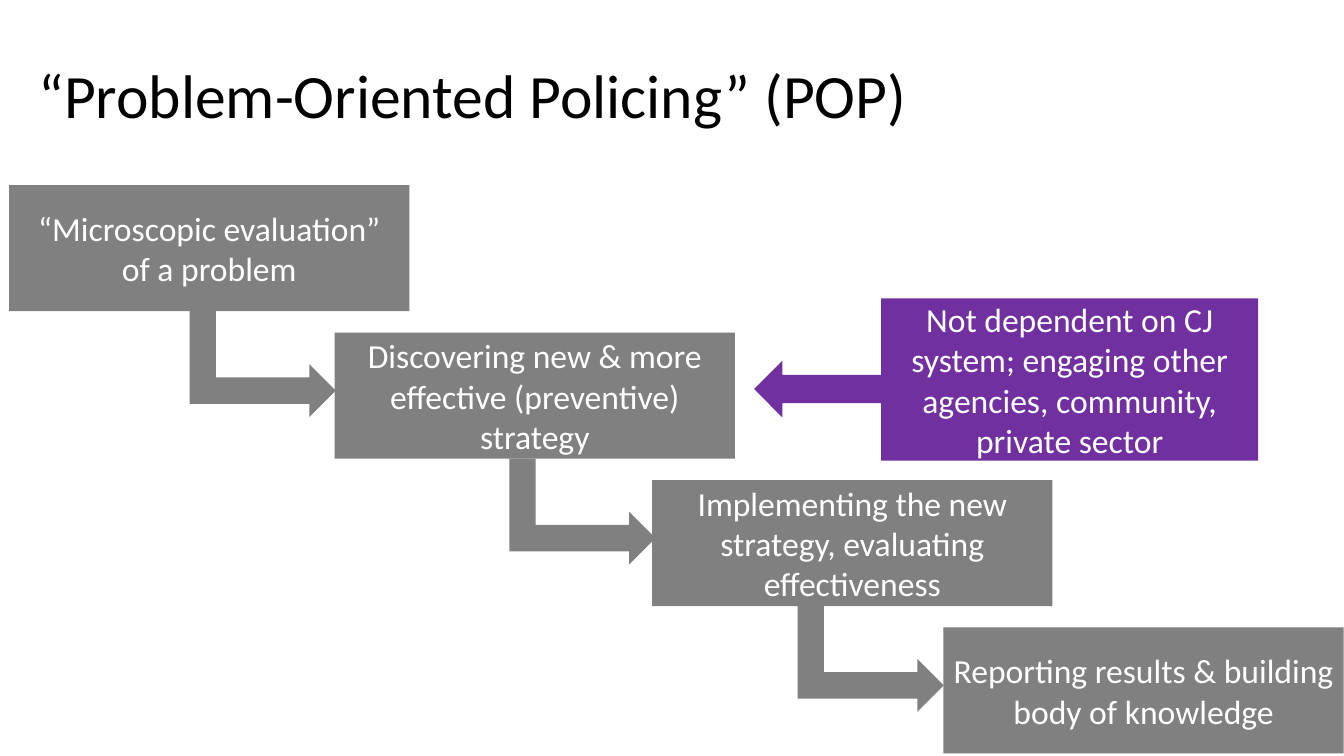
"""Build the problem-oriented policing slide: a staircase of steps with a side note."""
from dataclasses import dataclass

from pptx import Presentation
from pptx.dml.color import RGBColor
from pptx.enum.shapes import MSO_SHAPE as Shape
from pptx.enum.text import MSO_ANCHOR as Anchor, MSO_AUTO_SIZE as AutoSize, PP_ALIGN as Align
from pptx.util import Inches, Pt

COLORS = {"step": "808080", "note": "7030A0", "light": "FFFFFF", "title": "000000"}
FONT = "Calibri"
WIDTH, HEIGHT = Inches(13.33), Inches(7.5)
COL, ROW = WIDTH / 100, HEIGHT / 100
STEP_TOP, STEP_RISE = 24.5, 19.5
STEP_W, STEP_H = 29.78, 16.67
BEND_W, BEND_H = 10.88, 14


@dataclass
class Box:
    """A place on the slide in grid columns and rows."""
    col: float
    row: float
    cols: float
    rows: float

    def emu(self) -> tuple[int, int, int, int]:
        """Return left, top, width and height."""
        return (round(self.col * COL), round(self.row * ROW),
                round(self.cols * COL), round(self.rows * ROW))


@dataclass
class Step:
    """A stair with its left column and that of the arrow leaving it."""
    text: str
    col: float
    bend_col: float | None = None


STEPS = [
    Step("“Microscopic evaluation”\vof a problem", 0.68, 14.1),
    Step("Discovering new & more effective (preventive) strategy", 24.9, 37.89),
    Step("Implementing the new strategy, evaluating effectiveness", 48.53, 59.34),
    Step("Reporting results & building body of knowledge", 70.2),
]
NOTE = "Not dependent on CJ system; engaging other agencies, community, private sector"


def style(p, size: float, color: str, align: Align) -> None:
    """Set the font and alignment of a paragraph."""
    p.alignment = align
    p.font.name, p.font.size = FONT, Pt(size)
    p.font.color.rgb = RGBColor.from_string(COLORS[color])


def add_shape(s, kind: Shape, at: tuple[int, int, int, int], color: str, text: str = ""):
    """Add a flat filled shape, with text where given."""
    sp = s.shapes.add_shape(kind, *at)
    sp.shadow.inherit = False
    sp.fill.solid()
    sp.fill.fore_color.rgb = RGBColor.from_string(COLORS[color])
    sp.line.fill.background()
    if text:
        tf = sp.text_frame
        tf.word_wrap, tf.vertical_anchor = True, Anchor.MIDDLE
        tf.text = text
        style(tf.paragraphs[0], 24, "light", Align.CENTER)
    return sp


def add_bend(s, box: Box) -> None:
    """Add a down-then-right arrow that fills the box once turned."""
    left, top, w, h = box.emu()
    at = (left + (w - h) // 2, top + (h - w) // 2, h, w)
    add_shape(s, Shape.BENT_UP_ARROW, at, "step").rotation = 90


def add_title(s, text: str) -> None:
    """Place and format the title."""
    sp = s.shapes.title
    sp.left, sp.top, sp.width, sp.height = Box(2.1, 3.33, 86.27, 19.33).emu()
    tf = sp.text_frame
    tf.text = text
    tf.word_wrap, tf.auto_size, tf.vertical_anchor = True, AutoSize.NONE, Anchor.MIDDLE
    p = tf.paragraphs[0]
    p.line_spacing = 0.9
    style(p, 44, "title", Align.LEFT)


def main() -> None:
    """Draw the slide and save it."""
    prs = Presentation()
    prs.slide_width, prs.slide_height = WIDTH, HEIGHT
    s = prs.slides.add_slide(prs.slide_layouts[5])
    add_title(s, "“Problem-Oriented Policing” (POP)")
    for i, step in enumerate(STEPS):
        row = STEP_TOP + i * STEP_RISE
        add_shape(s, Shape.RECTANGLE, Box(step.col, row, STEP_W, STEP_H).emu(), "step", step.text)
        if step.bend_col is not None:
            add_bend(s, Box(step.bend_col, row + STEP_H, BEND_W, BEND_H))
    add_shape(s, Shape.LEFT_ARROW, Box(56.11, 47.73, 9.45, 7.47).emu(), "note")
    add_shape(s, Shape.RECTANGLE, Box(65.56, 39.47, 28.06, 21.47).emu(), "note", NOTE)
    prs.save("out.pptx")


if __name__ == "__main__":
    main()
